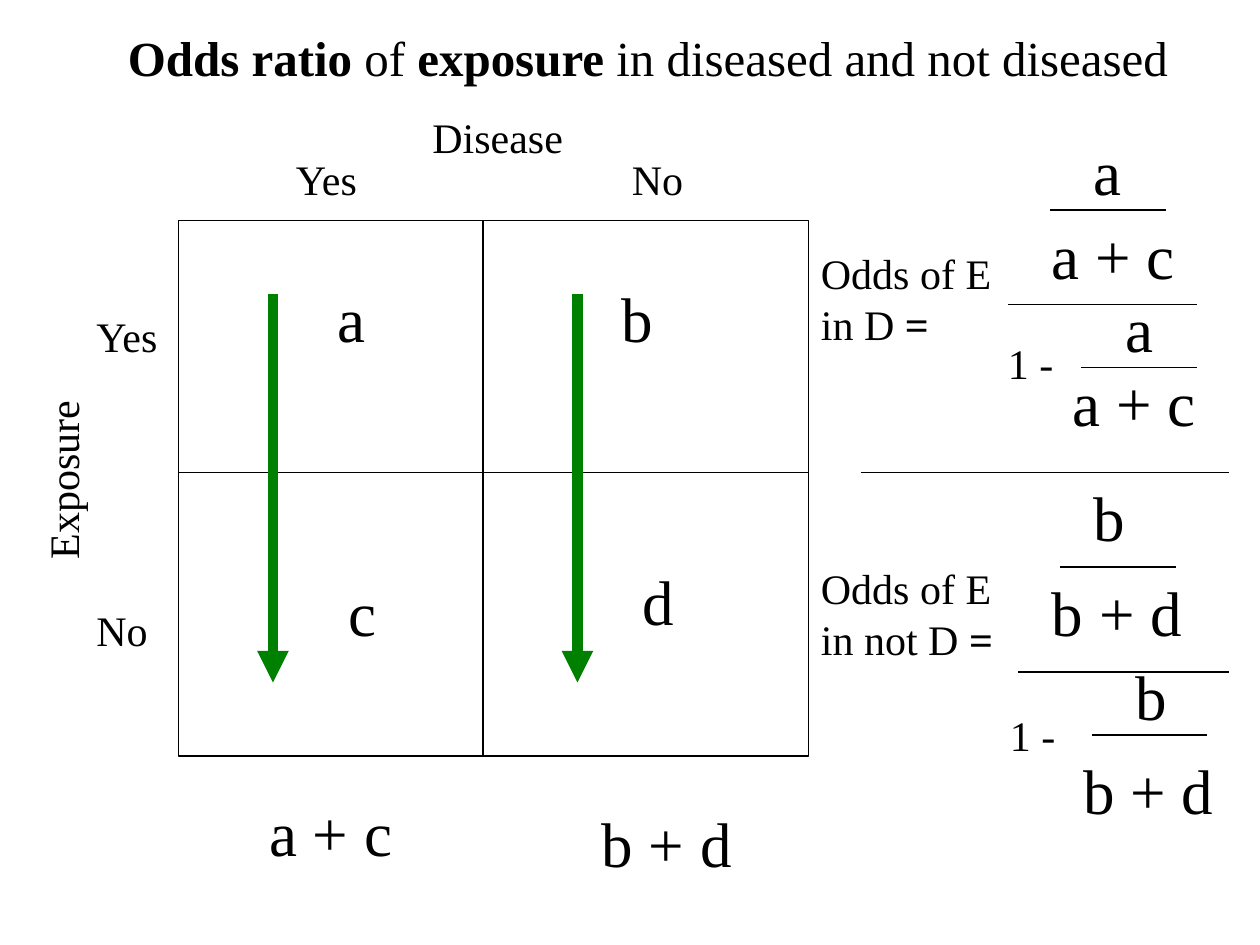
"""Build a slide on the odds ratio of exposure, with a two-by-two table and fractions."""
from lxml import etree
from pptx import Presentation
from pptx.dml.color import RGBColor
from pptx.enum import shapes, text
from pptx.oxml import ns
from pptx.util import Pt

PX = 7620
FONT = "Times New Roman"
COLORS = {"ink": "000000", "arrow": "008000"}

prs = Presentation()
prs.slide_width, prs.slide_height = 1200 * PX, 900 * PX
s = prs.slides.add_slide(prs.slide_layouts[6])


def add_text(runs, x, y, w, h, size, wrap=False):
    sp = s.shapes.add_textbox(x * PX, y * PX, w * PX, h * PX)
    tf = sp.text_frame
    tf.word_wrap = wrap
    tf.auto_size = text.MSO_AUTO_SIZE.SHAPE_TO_FIT_TEXT
    for content, bold in runs:
        r = tf.paragraphs[0].add_run()
        r.text = content
        r.font.name, r.font.size, r.font.bold = FONT, Pt(size), bold
        r.font.color.rgb = RGBColor.from_string(COLORS["ink"])
    return sp


def add_line(x1, y1, x2, y2, color="ink", width=0.75):
    cx = s.shapes.add_connector(
        shapes.MSO_CONNECTOR.STRAIGHT, x1 * PX, y1 * PX, x2 * PX, y2 * PX)
    cx.line.color.rgb = RGBColor.from_string(COLORS[color])
    cx.line.width = Pt(width)
    etree.SubElement(cx._element.spPr, ns.qn("a:effectLst"))
    return cx


left, top, right, bottom = 170, 210, 770, 720
mid_x, mid_y = 460, 450
table = s.shapes.add_shape(
    shapes.MSO_SHAPE.RECTANGLE, left * PX, top * PX, (right - left) * PX, (bottom - top) * PX)
table.shadow.inherit = False
table.fill.background()
table.line.color.rgb = RGBColor.from_string(COLORS["ink"])
table.line.width = Pt(0.75)
add_line(mid_x, top, mid_x, bottom)
add_line(left, mid_y, right, mid_y)

title = [("Odds ratio", True), (" of ", False), ("exposure", True),
         (" in diseased and not diseased", False)]
add_text(title, 110, 20, 1016, 68, 28)

labels = [
    ("Disease", 400, 100, 149), ("Yes", 270, 140, 86), ("No", 590, 140, 73),
    ("Yes", 80, 290, 86), ("No", 80, 570, 73),
    ("1 -", 948, 316, 67), ("1 -", 950, 670, 78),
]
for label, x, y, w in labels:
    add_text([(label, False)], x, y, w, 60, 24)
add_text([("Exposure", False)], -28, 427, 175, 60, 24).rotation = 270

widths = {"a": 50, "b": 54, "c": 50, "d": 54, "a + c": 142, "b + d": 148}
terms = [
    ("a", 310, 260), ("b", 580, 260), ("c", 320, 540), ("d", 600, 530),
    ("a", 1030, 120), ("a + c", 990, 200), ("a", 1060, 270), ("a + c", 1010, 340),
    ("b", 1030, 450), ("b + d", 990, 540), ("b", 1070, 620), ("b + d", 1020, 710),
]
for term, x, y in terms:
    add_text([(term, False)], x, y, widths[term], 84, 36)

for total, x, y in [("a + c", 170, 750), ("b + d", 490, 760)]:
    sp = add_text([(total, False)], x, y, 290, 84, 36, True)
    sp.text_frame.paragraphs[0].alignment = text.PP_ALIGN.CENTER

for odds, y in [("Odds of E in D", 230), ("Odds of E in not D", 530)]:
    add_text([(odds, False), (" =", True)], right, y, 210, 108, 24, True)

fraction_bars = [
    (1000, 1110, 200), (960, 1140, 290), (1030, 1140, 350), (820, 1170, mid_y),
    (1010, 1120, 540), (970, 1170, 640), (1040, 1150, 700),
]
for x1, x2, y in fraction_bars:
    add_line(x1, y, x2, y)

for x in (260, 550):
    arrow = add_line(x, 280, x, 650, "arrow", 6)
    etree.SubElement(arrow.line._get_or_add_ln(), ns.qn("a:tailEnd"), type="triangle")

prs.save("out.pptx")
